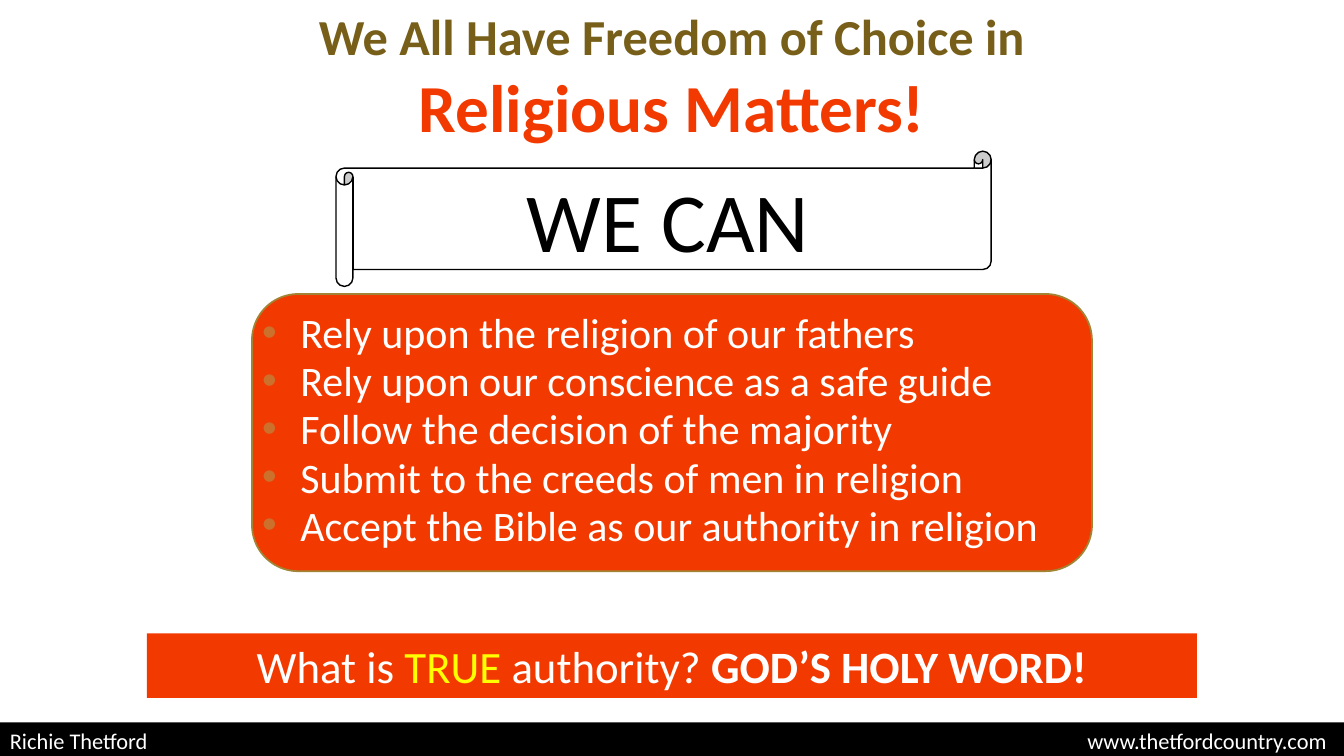
from lxml.etree import SubElement
from pptx import Presentation
from pptx.dml.color import RGBColor
from pptx.enum.shapes import MSO_SHAPE
from pptx.enum.text import MSO_ANCHOR, MSO_AUTO_SIZE, PP_ALIGN
from pptx.oxml import parse_xml
from pptx.oxml.ns import nsdecls, qn
from pptx.util import Inches, Pt

COLORS = {
    "red": "F23A00", "olive": "775E19", "gold": "A18435", "bullet": "CC702D",
    "white": "FFFFFF", "black": "000000", "yellow": "FFFF00",
}
FONT = "Calibri"
COLUMNS, ROWS = 16, 9

CHOICES = [
    "Rely upon the religion of our fathers",
    "Rely upon our conscience as a safe guide",
    "Follow the decision of the majority",
    "Submit to the creeds of men in religion",
    "Accept the Bible as our authority in religion",
]


def rgb(name):
    return RGBColor.from_string(COLORS[name])


class SlideBuilder:
    """Holds the style and the slide; places are in grid columns and rows."""

    def __init__(self, prs):
        self.s = prs.slides.add_slide(prs.slide_layouts[1])
        self.col = prs.slide_width / COLUMNS
        self.row = prs.slide_height / ROWS

    def box(self, left, top, width, height):
        return (round(left * self.col), round(top * self.row),
                round(width * self.col), round(height * self.row))

    def frame(self, sp, anchor, inset=0.05):
        tf = sp.text_frame
        tf.word_wrap = True
        tf.auto_size = MSO_AUTO_SIZE.NONE
        tf.vertical_anchor = anchor
        tf.margin_left = tf.margin_right = Inches(0.1)
        tf.margin_top = tf.margin_bottom = Inches(inset)
        return tf

    def run(self, p, text, size, color, bold=False, shadow=False):
        r = p.add_run()
        r.text = text
        r.font.size, r.font.bold = Pt(size), bold
        r.font.color.rgb = rgb(color)
        if shadow:
            r.font._element.append(parse_xml(
                f'<a:effectLst {nsdecls("a")}><a:outerShdw blurRad="38100" '
                'dist="38100" dir="2700000"><a:srgbClr val="000000">'
                '<a:alpha val="43000"/></a:srgbClr></a:outerShdw></a:effectLst>'))
        r.font.name = FONT

    def shape(self, kind, place, fill, line=None, line_width=1.0):
        sp = self.s.shapes.add_shape(kind, *self.box(*place))
        sp.shadow.inherit = False
        sp.fill.solid()
        sp.fill.fore_color.rgb = rgb(fill)
        if line:
            sp.line.color.rgb = rgb(line)
            sp.line.width = Pt(line_width)
        else:
            sp.line.fill.background()
        return sp

    def label(self, sp, runs, align=PP_ALIGN.CENTER, anchor=MSO_ANCHOR.MIDDLE,
              inset=0.05, right_tab=None):
        p = self.frame(sp, anchor, inset).paragraphs[0]
        p.alignment = align
        if right_tab:
            tabs = SubElement(p._p.get_or_add_pPr(), qn("a:tabLst"))
            SubElement(tabs, qn("a:tab"), pos=str(Inches(right_tab)), algn="r")
        for r in runs:
            self.run(p, *r)

    def placeholder(self, index, place):
        """Move a placeholder into place and in front of the shapes so far."""
        sp = self.s.placeholders[index]
        sp.left, sp.top, sp.width, sp.height = self.box(*place)
        self.s.shapes._spTree.append(sp._element)
        return sp

    def title(self, place, lines):
        sp = self.placeholder(0, place)
        p = self.frame(sp, MSO_ANCHOR.BOTTOM).paragraphs[0]
        p.alignment = PP_ALIGN.CENTER
        for i, (text, size, color) in enumerate(lines):
            if i:
                p.add_line_break()
                SubElement(p._p[-1], qn("a:rPr"), sz=str(lines[i - 1][1] * 100))
            self.run(p, text, size, color, bold=True, shadow=True)

    def bullets(self, place, items, size, color):
        tf = self.frame(self.placeholder(1, place), MSO_ANCHOR.TOP)
        for i, item in enumerate(items):
            p = tf.add_paragraph() if i else tf.paragraphs[0]
            pPr = p._p.get_or_add_pPr()
            pPr.set("marL", str(Inches(0.38)))
            pPr.set("indent", str(-Inches(0.38)))
            SubElement(SubElement(pPr, qn("a:buClr")), qn("a:srgbClr"),
                       val=COLORS["bullet"])
            SubElement(pPr, qn("a:buFont"), typeface="Arial")
            SubElement(pPr, qn("a:buChar"), char="•")
            p.alignment = PP_ALIGN.LEFT
            p.line_spacing = 0.8
            p.space_before = Pt(5.5 if i else 0)
            self.run(p, item, size, color)


def main():
    prs = Presentation()
    prs.slide_width, prs.slide_height = Inches(13.33), Inches(7.5)
    slide = SlideBuilder(prs)

    # Title
    slide.title((2, 0, 12, 1.8), [
        ("We All Have Freedom of Choice in", 36, "olive"),
        ("Religious Matters!", 48, "red"),
    ])

    # Scroll heading
    scroll = slide.shape(MSO_SHAPE.HORIZONTAL_SCROLL, (4, 1.8, 7.8, 1.61),
                         "white", "black")
    slide.label(scroll, [("WE CAN", 60, "black")], inset=0)

    # Choices panel
    slide.shape(MSO_SHAPE.ROUNDED_RECTANGLE, (3, 3.5, 10, 3.3),
                "red", "gold", 1.25)
    slide.bullets((3, 3.71, 10, 2.99), CHOICES, 30, "white")

    # Question bar
    question = slide.shape(MSO_SHAPE.RECTANGLE, (1.75, 7.54, 12.5, 0.77), "red")
    slide.label(question, [
        ("What is ", 32, "white"),
        ("TRUE", 32, "yellow"),
        (" authority? ", 32, "white"),
        ("GOD’S HOLY WORD!", 32, "white", True),
    ])

    # Footer
    footer = slide.shape(MSO_SHAPE.RECTANGLE, (0, 8.6, COLUMNS, 0.4), "black")
    slide.label(footer, [("Richie Thetford\twww.thetfordcountry.com", 16, "white")],
                PP_ALIGN.LEFT, MSO_ANCHOR.TOP, right_tab=13.06)

    prs.save("out.pptx")


if __name__ == "__main__":
    main()
